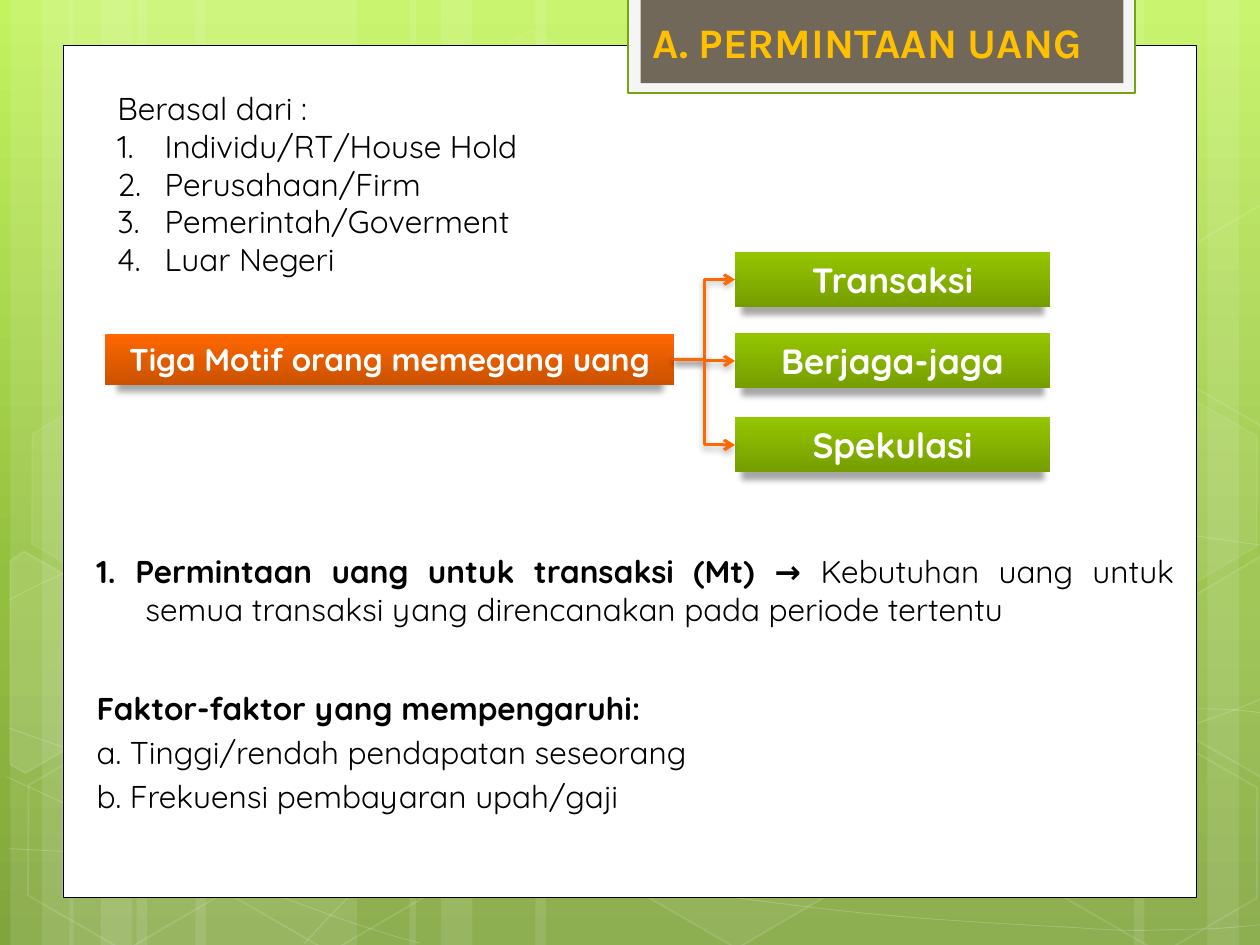
import copy
import lxml.etree
import pptx
import pptx.dml.color
import pptx.enum.shapes
import pptx.enum.text
import pptx.oxml.ns
import pptx.util

Pt = pptx.util.Pt
qn = pptx.oxml.ns.qn
RGB = pptx.dml.color.RGBColor.from_string
SubElement = lxml.etree.SubElement
SHAPE = pptx.enum.shapes.MSO_SHAPE
ALIGN = pptx.enum.text.PP_ALIGN
ANCHOR = pptx.enum.text.MSO_ANCHOR

COLORS = {
    "white": "FFFFFF", "black": "000000", "paper": "F5F5F5", "edge": "74A510",
    "brown": "71685A", "gold": "FFC000", "orange": "FF6700", "rust": "CB5200",
    "green": "94C600", "moss": "769D00",
    "bg_top": "C3F35F", "bg_mid": "93BF3F", "bg_low": "81A53E",
}


def paint(sp, fill=None, alpha=100, line=None, width=1, line_alpha=100):
    """Set fill and outline, each with its opacity in percent."""
    sp.shadow.inherit = False
    for target, name, opacity in ((sp.fill, fill, alpha), (sp.line.fill, line, line_alpha)):
        if not name:
            target.background()
            continue
        target.solid()
        target.fore_color.rgb = RGB(COLORS[name])
        if opacity < 100:
            clr = target._xPr.find(qn("a:solidFill"))[0]
            SubElement(clr, qn("a:alpha"), val=str(opacity * 1000))
    if line:
        sp.line.width = Pt(width)


def write(sp, paragraphs, font="Quicksand", size=18, color="black", anchor=ANCHOR.TOP, **para_format):
    """Fill a shape with paragraphs, each a list of (text, bold) runs."""
    tf = sp.text_frame
    tf.word_wrap = True
    tf.auto_size = pptx.enum.text.MSO_AUTO_SIZE.NONE
    tf.vertical_anchor = anchor
    for i, runs in enumerate(paragraphs):
        p = tf.paragraphs[0] if i == 0 else tf.add_paragraph()
        for key, value in para_format.items():
            setattr(p, key, value)
        for text, bold in runs:
            r = p.add_run()
            r.text = text
            for key, value in {"name": font, "size": Pt(size), "bold": bold}.items():
                setattr(r.font, key, value)
            r.font.color.rgb = RGB(COLORS[color])


prs = pptx.Presentation()
prs.slide_width, prs.slide_height = Pt(720), Pt(540)
s = prs.slides.add_slide(prs.slide_layouts[5])
shapes = s.shapes

# Background gradient with three stops
bg = s.background.fill
bg.gradient()
bg.gradient_angle = 270
gs_list = s._element.xpath(".//p:bg//a:gsLst")[0]
gs_list.append(copy.deepcopy(gs_list[1]))
for stop, pos, name in zip(bg.gradient_stops, (0, 0.62, 1), ("bg_top", "bg_mid", "bg_low")):
    stop.position = pos
    stop.color.rgb = RGB(COLORS[name])

# Translucent vertical bars: left, width
bars = [(78, 126), (6, 36), (24, 60), (111.6, 126), (39.6, 36), (57.6, 60),
        (528, 126), (690, 36), (648, 60), (306, 222), (234, 36), (252, 60)]
for left, width in bars:
    sp = shapes.add_shape(SHAPE.RECTANGLE, Pt(left), 0, Pt(width), Pt(540))
    paint(sp, "white", 10)

# Sweeping curves: start point, then control and end points, three to a segment
curves = [
    [(5, 485), (44, 487), (83, 489), (137, 488), (191, 487), (258, 486), (330, 479),
     (402, 472), (504, 458), (570, 444), (636, 430), (703, 409), (725, 397)],
    [(5, 343), (26, 332), (47, 321), (87, 310), (128, 300), (186, 284), (250, 279),
     (314, 274), (392, 273), (471, 279), (550, 284), (682, 307), (725, 312)],
    [(4, 444), (91, 484), (178, 523), (240, 539)],
    [(5, 416), (27, 424), (50, 432), (92, 444), (134, 454), (197, 472), (257, 485),
     (317, 497), (392, 510), (452, 517), (512, 525), (576, 528), (614, 530),
     (652, 533), (662, 531), (680, 531), (699, 531), (712, 529), (725, 528)],
    [(174, 539), (187, 525), (200, 510), (217, 498), (235, 485), (259, 470), (279, 460),
     (300, 450), (312, 446), (338, 438), (364, 431), (413, 421), (438, 416),
     (464, 411), (467, 411), (490, 410), (512, 408), (547, 405), (572, 405),
     (597, 404), (638, 405), (638, 405), (654, 405), (670, 405), (686, 405),
     (699, 405), (711, 406), (718, 407), (724, 408), (722, 407), (724, 408)],
]
for curve in curves:
    points = [(Pt(x), Pt(y)) for x, y in curve]
    fb = shapes.build_freeform(*points[0])
    fb.add_line_segments(points[1:], close=False)
    sp = fb.convert_to_shape()
    outline = sp._element.xpath(".//a:path")[0]
    for i, ln_to in enumerate(outline.findall(qn("a:lnTo"))):
        if i % 3 == 0:
            bezier = SubElement(outline, qn("a:cubicBezTo"))
        bezier.append(ln_to[0])
        outline.remove(ln_to)
    paint(sp, line="white", width=0.5, line_alpha=20)

# Hexagons: left, top, fill opacity, line opacity
hexagons = [(240.5, 25.9, 4, 8), (357.8, 424.1, 6, 12), (7.9, 425.5, 0, 12),
            (10.1, 224.6, 7, 8), (125.3, 426.2, 0, 12), (542.2, 326.2, 10, 12),
            (600.5, 427, 0, 12), (600.5, 226.1, 7, 8)]
for left, top, alpha, line_alpha in hexagons:
    sp = shapes.add_shape(SHAPE.HEXAGON, Pt(left), Pt(top), Pt(126), Pt(109.4))
    sp.adjustments[0] = 0.285
    sp.rotation = 30
    paint(sp, "white" if alpha else None, alpha, "white", 1, line_alpha)

# Hexagons cut off by the slide edges, turned like the whole ones
left_cut = [(0, 8.7), (4.2, 0), (68, 0), (99.4, 55.3), (68.1, 109.4), (58.2, 109.4)]
right_cut = [(0, 54.5), (30.6, 0), (37.3, 0), (97.9, 104.4), (94.5, 109.4), (31.3, 109.4)]
for outline, left, top, alpha in ((left_cut, -23.8, 330.5, 10), (right_cut, 660.2, 319.7, 4),
                                  (right_cut, 660.2, 118.8, 0)):
    points = [(Pt(left + x), Pt(top + y)) for x, y in outline]
    fb = shapes.build_freeform(*points[0])
    fb.add_line_segments(points[1:], close=True)
    sp = fb.convert_to_shape()
    sp.rotation = 30
    paint(sp, "white" if alpha else None, alpha, "white", 1, 12)

# White page and title tab
panels = [((36, 26, 648, 487), "white", "black", 0.5),
          ((359, -1.5, 289.7, 54.7), "paper", "edge", 1.25),
          ((366, -1.5, 276, 49), "brown", None, 0)]
for box, fill, line, width in panels:
    sp = shapes.add_shape(SHAPE.RECTANGLE, *map(Pt, box))
    paint(sp, fill, line=line, width=width)

# Title, brought in front of the tab
title = shapes.title
for key, value in {"left": 365.8, "top": 6, "width": 273, "height": 36.3}.items():
    setattr(title, key, Pt(value))
write(title, [[("A. PERMINTAAN UANG", True)]], "Karla", 24, "gold", alignment=ALIGN.LEFT)
shapes._spTree.append(title._element)

# Factors
sp = shapes.add_textbox(Pt(48.2), Pt(390), Pt(425), Pt(93))
write(sp, [[("Faktor-faktor yang mempengaruhi:", True)],
           [("a. Tinggi/rendah pendapatan seseorang", False)],
           [("b. Frekuensi pembayaran upah/gaji", False)]], space_before=Pt(3.6))

# Sources of demand, as a numbered list
sp = shapes.add_textbox(Pt(60), Pt(47.3), Pt(270), Pt(116.6))
sources = ["Berasal dari :", "Individu/RT/House Hold", "Perusahaan/Firm",
           "Pemerintah/Goverment", "Luar Negeri"]
write(sp, [[(text, False)] for text in sources])
for p in sp.text_frame.paragraphs[1:]:
    pPr = p._p.get_or_add_pPr()
    pPr.set("marL", str(Pt(27)))
    pPr.set("indent", str(-Pt(27)))
    SubElement(pPr, qn("a:buAutoNum"), type="arabicPeriod")

# Motive boxes: text, box, size, gradient
boxes = [("Tiga Motif orang memegang uang", (60, 190.8, 325.2, 29), 18, ("orange", "rust"))]
for text, top in (("Transaksi", 144), ("Berjaga-jaga", 190.5), ("Spekulasi", 238.5)):
    boxes.append((text, (420, top, 180, 31.5), 20, ("green", "moss")))
shadowed = []
for text, box, size, gradient in boxes:
    sp = shapes.add_shape(SHAPE.RECTANGLE, *map(Pt, box))
    paint(sp)
    sp.fill.gradient()
    sp.fill.gradient_angle = 270
    for stop, name in zip(sp.fill.gradient_stops, gradient):
        stop.color.rgb = RGB(COLORS[name])
    write(sp, [[(text, True)]], size=size, color="white", anchor=ANCHOR.MIDDLE,
          alignment=ALIGN.CENTER)
    shadowed.append((sp, 34, 3.5, 4, 96))

# Elbow arrows from the question to each motive
for _, (left, top, _, height), _, _ in boxes[1:]:
    cx = shapes.add_connector(pptx.enum.shapes.MSO_CONNECTOR.ELBOW,
                              Pt(385.2), Pt(205.3), Pt(left), Pt(top + height / 2))
    cx.line.color.rgb = RGB(COLORS["orange"])
    cx.line.width = Pt(1.75)
    SubElement(cx.line._get_or_add_ln(), qn("a:tailEnd"), type="arrow")
    SubElement(cx._element.spPr, qn("a:effectLst"))
    shadowed.append((cx, 28, 4, 2, 100))

# Soft shadows below boxes and arrows
for sp, alpha, blur, dist, scale in shadowed:
    effects = sp._element.spPr.find(qn("a:effectLst"))
    shadow = SubElement(effects, qn("a:outerShdw"), blurRad=str(Pt(blur)), dist=str(Pt(dist)),
                        dir="5400000", sx=str(scale * 1000), rotWithShape="0")
    clr = SubElement(shadow, qn("a:srgbClr"), val=COLORS["black"])
    SubElement(clr, qn("a:alpha"), val=str(alpha * 1000))

# Definition of transaction demand, with a hanging indent
sp = shapes.add_textbox(Pt(48), Pt(312), Pt(630), Pt(51))
write(sp, [[("1. Permintaan uang untuk transaksi (Mt) → ", True),
            ("Kebutuhan uang untuk semua transaksi yang direncanakan pada periode tertentu", False)]],
      alignment=ALIGN.JUSTIFY)
pPr = sp.text_frame.paragraphs[0]._p.get_or_add_pPr()
pPr.set("marL", str(Pt(28)))
pPr.set("indent", str(-Pt(28)))

prs.save("out.pptx")
